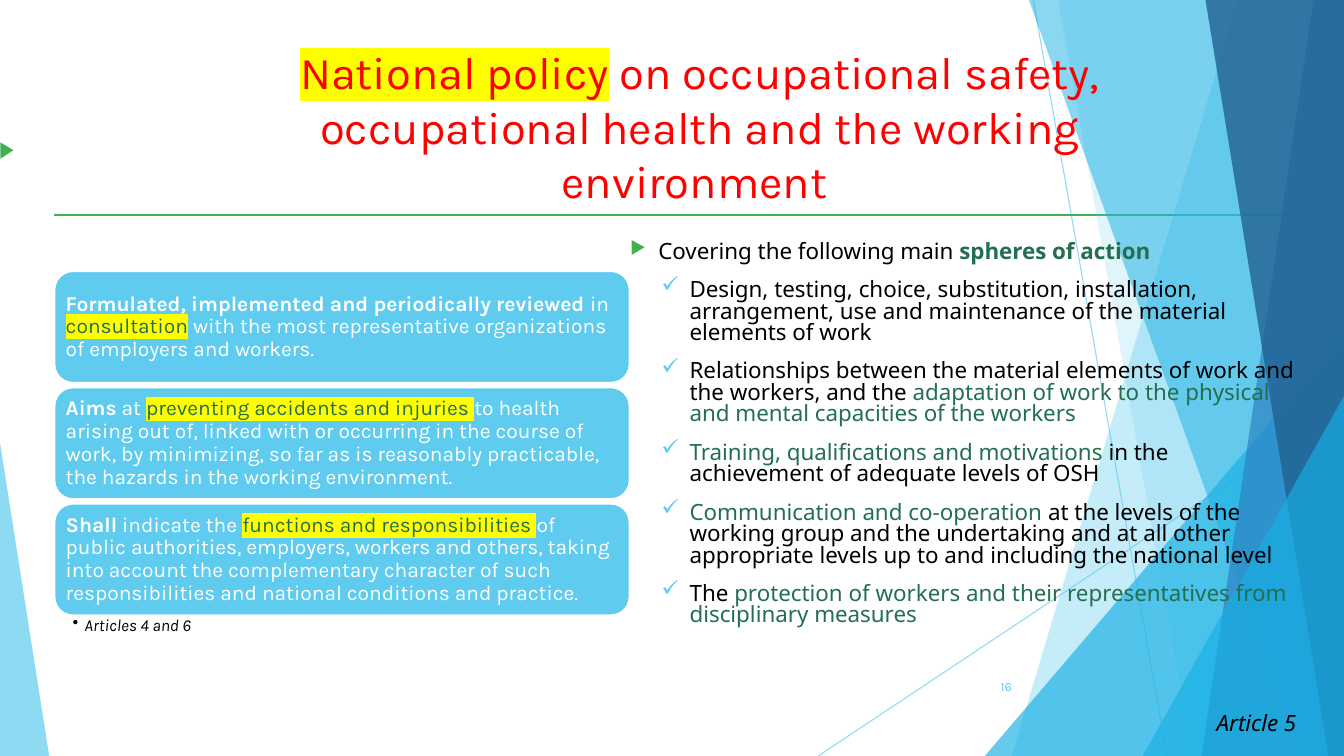
import pptx
import pptx.util
import pptx.dml.color
import pptx.enum.shapes
import pptx.enum.text
import pptx.oxml.ns
import lxml.etree

Cm = pptx.util.Cm
Pt = pptx.util.Pt
RGB = pptx.dml.color.RGBColor
Kind = pptx.enum.shapes.MSO_SHAPE
Wire = pptx.enum.shapes.MSO_CONNECTOR.STRAIGHT
Align = pptx.enum.text.PP_ALIGN
Anchor = pptx.enum.text.MSO_ANCHOR
qn = pptx.oxml.ns.qn

SKY = RGB(0x5F, 0xCB, 0xEF)
AZURE = RGB(0x17, 0xB0, 0xE4)
BLUE = RGB(0x2E, 0x83, 0xC3)
NAVY = RGB(0x22, 0x62, 0x92)
GREEN = RGB(0x42, 0xB0, 0x51)
PINE = RGB(0x23, 0x6F, 0x50)
RED = RGB(0xFF, 0, 0)
YELLOW = RGB(0xFF, 0xFF, 0)
WHITE = RGB(0xFF, 0xFF, 0xFF)
BLACK = RGB(0, 0, 0)
WIDE, HIGH = 33.87, 19.05

deck = pptx.Presentation()
deck.slide_width, deck.slide_height = Cm(WIDE), Cm(HIGH)
slide = deck.slides.add_slide(deck.slide_layouts[6])
shapes = slide.shapes


def write(para, runs, base, bullet=None, **form):
    """Fill a paragraph with (text, changes) runs and an optional bullet."""
    for key, val in form.items():
        setattr(para, key, val)
    if bullet:
        sign, hue, size, left, hang = bullet
        props = para._p.get_or_add_pPr()
        props.set("marL", str(Cm(left)))
        props.set("indent", str(-Cm(hang)))
        tint = lxml.etree.SubElement(props, qn("a:buClr"))
        lxml.etree.SubElement(tint, qn("a:srgbClr"), val=str(hue))
        lxml.etree.SubElement(props, qn("a:buSzPct"), val=str(size * 1000))
        lxml.etree.SubElement(props, qn("a:buChar"), char=sign)
    for text, change in runs:
        run = para.add_run()
        run.text = text
        look = {**base, **change}
        run.font.color.rgb = look.pop("color")
        mark = look.pop("mark", None)
        for key, val in look.items():
            setattr(run.font, key, val)
        if mark:
            glow = lxml.etree.Element(qn("a:highlight"))
            lxml.etree.SubElement(glow, qn("a:srgbClr"), val=str(mark))
            run._r.rPr.find(qn("a:solidFill")).addnext(glow)


def frame(shape, pads, anchor=Anchor.TOP):
    """Set wrapping, insets (left, top, right, bottom) and anchor."""
    text = shape.text_frame
    text.word_wrap = True
    text.vertical_anchor = anchor
    for side, pad in zip(("left", "top", "right", "bottom"), pads):
        setattr(text, "margin_" + side, Cm(pad))
    return text


# Straight lines: ends, colour, width, opacity
for ends, hue, width, alpha in (
    ((26.04, 0, 29.41, HIGH), SKY, 0.75, 70),
    ((WIDE, 10.24, 20.62, HIGH), SKY, 0.75, 70),
    ((1.37, 5.41, 32.51, 5.41), GREEN, 1.5, 100),
):
    line = shapes.add_connector(Wire, *map(Cm, ends))
    line.line.color.rgb = hue
    line.line.width = Pt(width)
    props = line._element.spPr
    lxml.etree.SubElement(props, qn("a:effectLst"))
    for tone in props.iter(qn("a:srgbClr")):
        lxml.etree.SubElement(tone, qn("a:alpha"), val=str(alpha * 1000))

# Glass facets: top x, top y, bottom x, colour, opacity
facets = []
for peak, top, foot, hue, alpha in (
    (31.19, 0, 25.5, SKY, 36),
    (26.67, 0, 30.05, SKY, 20),
    (WIDE, 8.46, 24.82, AZURE, 66),
    (25.93, 0, 32.79, AZURE, 50),
    (33.1, 0, 30.28, BLUE, 70),
    (30.38, 0, 33.48, NAVY, 80),
    (WIDE, 9.98, 28.8, AZURE, 66),
):
    if top:
        part = shapes.add_shape(Kind.ISOSCELES_TRIANGLE, Cm(foot), Cm(top),
                                Cm(WIDE - foot), Cm(HIGH - top))
        part.adjustments[0] = 1
    else:
        path = shapes.build_freeform(Cm(peak), 0)
        path.add_line_segments([(Cm(WIDE), 0), (Cm(WIDE), Cm(HIGH)), (Cm(foot), Cm(HIGH))])
        part = path.convert_to_shape()
    facets.append((part, hue, alpha))

# Left wedge and small arrow
for spot, tip, turn, hue, alpha in (
    ((0, 11.15, 1.24, 7.9), 0, 0, SKY, 70),
    ((-0.03, 3.63, 0.41, 0.33), 0.477, 90, GREEN, 100),
):
    part = shapes.add_shape(Kind.ISOSCELES_TRIANGLE, *map(Cm, spot))
    part.adjustments[0] = tip
    part.rotation = turn
    facets.append((part, hue, alpha))

for part, hue, alpha in facets:
    part.shadow.inherit = False
    part.line.fill.background()
    part.fill.solid()
    part.fill.fore_color.rgb = hue
    for tone in part._element.spPr.iter(qn("a:srgbClr")):
        lxml.etree.SubElement(tone, qn("a:alpha"), val=str(alpha * 1000))

# Title
title = frame(shapes.add_textbox(Cm(6.17), Cm(0.99), Cm(22.94), Cm(3.66)),
              (0.25, 0.13, 0.25, 0.13))
write(title.paragraphs[0], [
    ("National policy", {"mark": YELLOW}),
    (" on occupational safety, occupational health and the working environment ", {}),
], {"name": "Karla", "size": Pt(32.4), "color": RED}, alignment=Align.CENTER)

# Cards on the left
bold = {"bold": True}
lit = {"color": PINE, "mark": YELLOW}
cards = (
    [("Formulated, implemented and periodically reviewed ", bold), ("in ", {}),
     ("consultation", lit),
     (" with the most representative organizations of employers and workers.", {})],
    [("Aims", bold), (" at ", {}), ("preventing accidents and injuries ", lit),
     ("to health arising out of, linked with or occurring in the course of work, "
      "by minimizing, so far as is reasonably practicable, the hazards in the "
      "working environment.", {})],
    [("Shall", bold), (" indicate the ", {}), ("functions and responsibilities ", lit),
     ("of public authorities, employers, workers and others, taking into account "
      "the complementary character of such responsibilities and national "
      "conditions and practice.", {})],
)
for row, runs in enumerate(cards):
    card = shapes.add_shape(Kind.ROUNDED_RECTANGLE, Cm(1.37), Cm(6.83 + 2.93 * row),
                            Cm(14.5), Cm(2.82))
    card.shadow.inherit = False
    card.fill.solid()
    card.fill.fore_color.rgb = SKY
    card.line.color.rgb = WHITE
    card.line.width = Pt(1.5)
    text = frame(card, [0.15] * 4, Anchor.MIDDLE)
    write(text.paragraphs[0], runs, {"name": "Karla", "size": Pt(15), "color": WHITE},
          alignment=Align.LEFT, line_spacing=0.9)

# Source note under the cards
note = frame(shapes.add_textbox(Cm(1.37), Cm(15.49), Cm(14.5), Cm(0.69)),
             (0.46, 0.05, 0.3, 0.05))
write(note.paragraphs[0], [("Articles 4 and 6", {"italic": True})],
      {"name": "Karla", "size": Pt(12), "color": BLACK},
      ("•", BLACK, 100, 0.3, 0.3), line_spacing=0.9)

# Slide number
page = frame(shapes.add_textbox(Cm(23.85), Cm(16.79), Cm(1.9), Cm(1.02)),
             (0.25, 0.13, 0.25, 0.13), Anchor.MIDDLE)
write(page.paragraphs[0], [("16", {})],
      {"name": "Karla", "size": Pt(9), "color": SKY}, alignment=Align.RIGHT)

# Spheres of action
plain = {"name": "Noto Sans", "size": Pt(16), "color": BLACK}
pine = {"color": PINE}
points = (
    [("Covering the following main ", {}), ("spheres of action", {**pine, **bold})],
    [("Design, testing, choice, substitution, installation, arrangement, use and "
      "maintenance of the material elements of work", {})],
    [("Relationships between the material elements of work and the workers, and the ", {}),
     ("adaptation of work to the physical and mental capacities of the workers", pine)],
    [("Training, qualifications and motivations ", pine),
     ("in the achievement of adequate levels of OSH", {})],
    [("Communication and co-operation ", pine),
     ("at the levels of the working group and the undertaking and at all other "
      "appropriate levels up to and including the national level", {})],
    [("The ", {}),
     ("protection of workers and their representatives from disciplinary measures", pine)],
)
body = frame(shapes.add_textbox(Cm(15.88), Cm(6.1), Cm(16.79), Cm(10.85)), [0] * 4)
for row, runs in enumerate(points):
    para = body.add_paragraph() if row else body.paragraphs[0]
    bullet = ("✓", SKY, 100, 1.5, 0.71) if row else ("▶", GREEN, 80, 0.71, 0.71)
    write(para, runs, plain, bullet, line_spacing=0.8,
          space_before=Pt(6 if row else 0), space_after=Pt(6))

# Article reference
ref = frame(shapes.add_textbox(Cm(29), Cm(17.99), Cm(3.67), Cm(0.7)), [0] * 4)
write(ref.paragraphs[0], [("Article 5", {"italic": True})], plain,
      alignment=Align.RIGHT, line_spacing=0.8)

deck.save("out.pptx")
